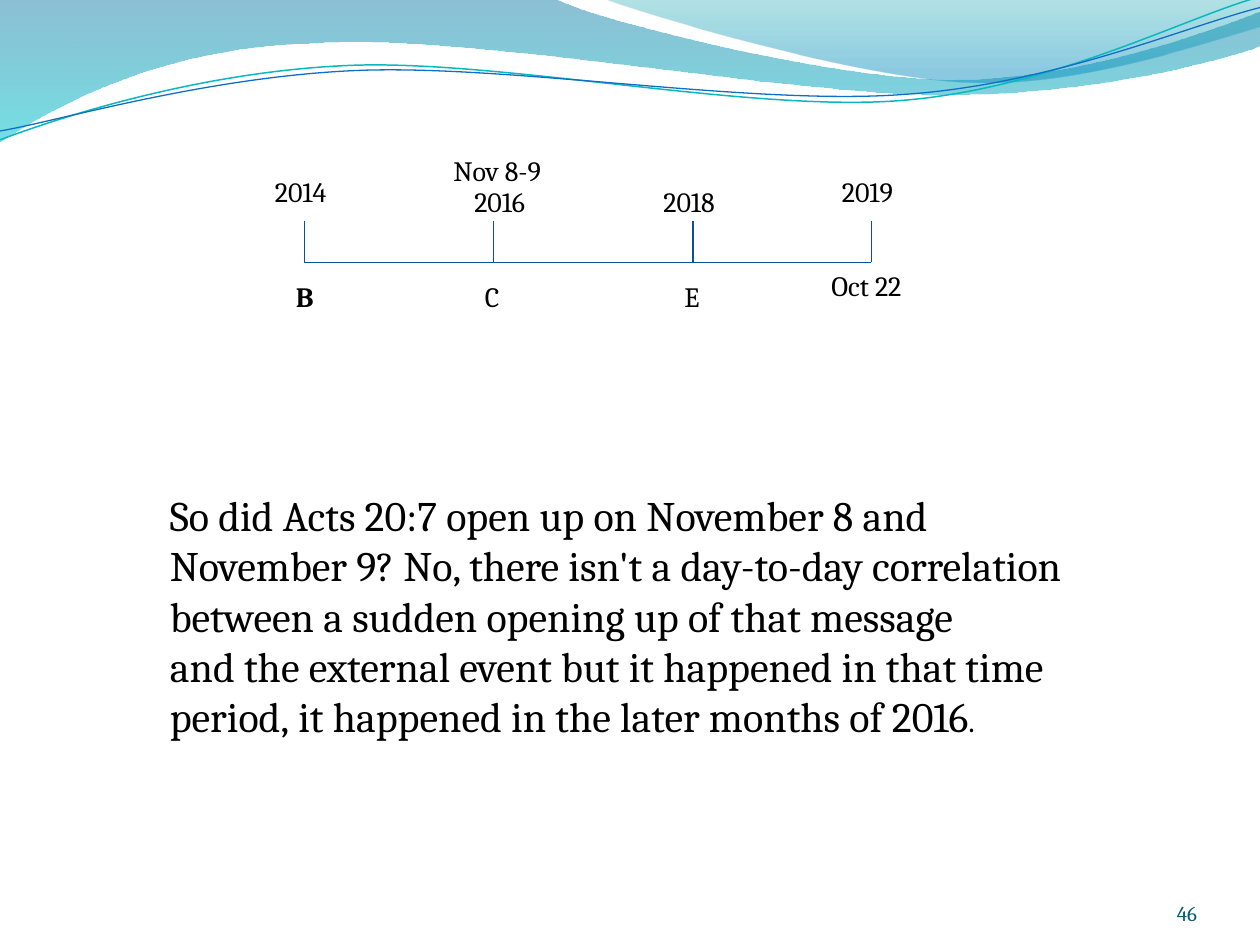
from lxml import etree
from pptx import Presentation
from pptx.dml.color import RGBColor
from pptx.enum.shapes import MSO_CONNECTOR
from pptx.enum.text import MSO_ANCHOR, MSO_AUTO_SIZE, PP_ALIGN
from pptx.oxml.ns import qn
from pptx.util import Inches, Pt

STRAIGHT = MSO_CONNECTOR.STRAIGHT
BOTTOM, TOP = MSO_ANCHOR.BOTTOM, MSO_ANCHOR.TOP
GROW, FIXED = MSO_AUTO_SIZE.SHAPE_TO_FIT_TEXT, MSO_AUTO_SIZE.NONE
LEFT, RIGHT = PP_ALIGN.LEFT, PP_ALIGN.RIGHT

FONT = "Cambria"
UNIT = Inches(1) // 12
COLUMNS, ROWS = 120, 90
LABEL_HEIGHT = 4.44
HARD_SPACE = chr(160)
COLORS = {
    "text": "000000", "number": "045D75", "timeline": "095295",
    "teal_line": "0AB8BF", "blue_line": "0F6FC6",
    "deep_blue": "0074A1", "aqua": "00C6CF", "teal": "00A1A9", "sky": "008BBF",
}

# Each path: start point, then line ends (2 numbers) or Bézier curves (6 numbers).
WIDE_WAVE = [(0, 0), (4.4, -0.01), (4.76, 0.17, 6.64, 0.63, 7.58, 0.63),
             (8.53, 0.63, 9.58, 0.26, 10, 0.09), (10.01, 0.36),
             (9.83, 0.44, 8.7, 0.76, 7.46, 0.75), (6.22, 0.75, 3.82, 0.28, 2.57, 0.34),
             (1.29, 0.36, 0.46, 0.83, -0.01, 1.13), (0, 0)]
RIGHT_WAVE = [(4.79, -0.01), (5.09, 0.11, 6.82, 0.62, 7.69, 0.65),
              (8.56, 0.69, 9.61, 0.32, 10, 0.21), (10, 0), (4.79, -0.01)]
TEAL_CURVE = [(0, 1.11), (0.48, 0.93, 1.58, 0.57, 2.77, 0.52),
              (3.95, 0.47, 5.93, 0.89, 7.13, 0.8), (8.33, 0.71, 9.38, 0.15, 9.98, -0.02)]
BLUE_CURVE = [(0, 1.04), (0.47, 0.96, 1.64, 0.61, 2.83, 0.56),
              (4.03, 0.51, 5.97, 0.84, 7.17, 0.75), (8.36, 0.67, 9.41, 0.21, 10, 0.06)]

TICK_COLUMNS = [29, 47, 66, 83]
TICK_TOP, TICK_BOTTOM = 21, 25
LABELS = [("2014", 25, 16, 9), ("2016", 44, 17, 12), ("2018", 62, 17, 10),
          ("2019", 79, 16, 10), ("B", 27, 26, 7), ("C", 45, 26, 7),
          ("E", 64, 26, 6), ("Oct 22", 78, 25, 14), ("Nov 8-9", 42, 14, 15)]
# A tilde stands for a space at which the line must not break.
BODY = ("So did Acts 20:7 open up~on November 8 and November 9? No, there~isn't~a day-to-day "
        "correlation between a~sudden~opening up~of that message and~the external event but it "
        "happened in~that~time period,~it happened in the~later months of 2016")


def color(name):
    """Return the named colour."""
    return RGBColor.from_string(COLORS[name])


def add_path(slide, path, close):
    """Draw a path of lines and Bézier curves given in inches."""
    points = [(Inches(segment[index]), Inches(segment[index + 1]))
              for segment in path for index in range(0, len(segment), 2)]
    builder = slide.shapes.build_freeform(*points[0])
    builder.add_line_segments(points[1:], close=close)
    shape = builder.convert_to_shape()
    shape.shadow.inherit = False
    lines = iter(list(shape._element.spPr.iter(qn("a:lnTo"))))
    for segment in path[1:]:
        line = next(lines)
        if len(segment) == 6:
            curve = etree.Element(qn("a:cubicBezTo"))
            line.addprevious(curve)
            for control in (line, next(lines), next(lines)):
                curve.append(control[0])
                control.getparent().remove(control)
    return shape


def add_wave(slide, path, stops):
    """Add a wave filled with a translucent vertical gradient."""
    shape = add_path(slide, path, True)
    shape.line.fill.background()
    shape.fill.gradient()
    gradient = shape._element.spPr.find(qn("a:gradFill"))
    stop_list = gradient.find(qn("a:gsLst"))
    for stop in list(stop_list):
        stop_list.remove(stop)
    for position, name, alpha in stops:
        stop = etree.SubElement(stop_list, qn("a:gs"), pos=str(position * 1000))
        fill = etree.SubElement(stop, qn("a:srgbClr"), val=COLORS[name])
        etree.SubElement(fill, qn("a:alpha"), val=str(alpha * 1000))
    gradient.find(qn("a:lin")).set("ang", str(90 * 60000))


def add_curve(slide, path, name, width):
    """Add an unfilled curved line."""
    shape = add_path(slide, path, False)
    shape.fill.background()
    shape.line.color.rgb = color(name)
    shape.line.width = Pt(width)


def add_line(slide, *ends):
    """Add a timeline stroke between two grid points."""
    line = slide.shapes.add_connector(STRAIGHT, *(round(end * UNIT) for end in ends))
    line.line.color.rgb = color("timeline")
    line.line.width = Pt(0.75)
    etree.SubElement(line._element.spPr, qn("a:effectLst"))


def add_text(slide, text, box, size, name="text", align=LEFT, anchor=TOP, auto_size=GROW):
    """Add a one-paragraph text box on the grid and return its frame."""
    shape = slide.shapes.add_textbox(*(round(length * UNIT) for length in box))
    frame = shape.text_frame
    frame.word_wrap = True
    frame.auto_size = auto_size
    frame.vertical_anchor = anchor
    paragraph = frame.paragraphs[0]
    paragraph.text = text
    paragraph.alignment = align
    paragraph.font.name = FONT
    paragraph.font.size = Pt(size)
    paragraph.font.color.rgb = color(name)
    return frame


def add_timeline(slide):
    """Add the axis, its ticks and all labels."""
    add_line(slide, TICK_COLUMNS[0], TICK_BOTTOM, TICK_COLUMNS[-1], TICK_BOTTOM)
    for column in TICK_COLUMNS:
        add_line(slide, column, TICK_TOP, column, TICK_BOTTOM)
    for text, column, row, width in LABELS:
        frame = add_text(slide, text, (column, row, width, LABEL_HEIGHT), 16)
        if text == "B":
            frame.paragraphs[0].font.bold = True


def main():
    """Build and save the slide."""
    presentation = Presentation()
    presentation.slide_width = COLUMNS * UNIT
    presentation.slide_height = ROWS * UNIT
    slide = presentation.slides.add_slide(presentation.slide_layouts[6])
    add_wave(slide, WIDE_WAVE, [(0, "deep_blue", 45), (100, "aqua", 55)])
    add_wave(slide, RIGHT_WAVE, [(0, "teal", 30), (80, "sky", 45)])
    add_curve(slide, TEAL_CURVE, "teal_line", 0.85)
    add_curve(slide, BLUE_CURVE, "blue_line", 0.75)
    number = add_text(slide, "46", (104, 83.4, 10, 4.8), 12, "number", RIGHT, BOTTOM, FIXED)
    number.margin_left = number.margin_top = number.margin_right = number.margin_bottom = 0
    body = add_text(slide, BODY.replace("~", HARD_SPACE), (15, 46, 90, 34), 24)
    full_stop = body.paragraphs[0].add_run()
    full_stop.text = "."
    full_stop.font.size = Pt(18)
    add_timeline(slide)
    presentation.save("out.pptx")


if __name__ == "__main__":
    main()
